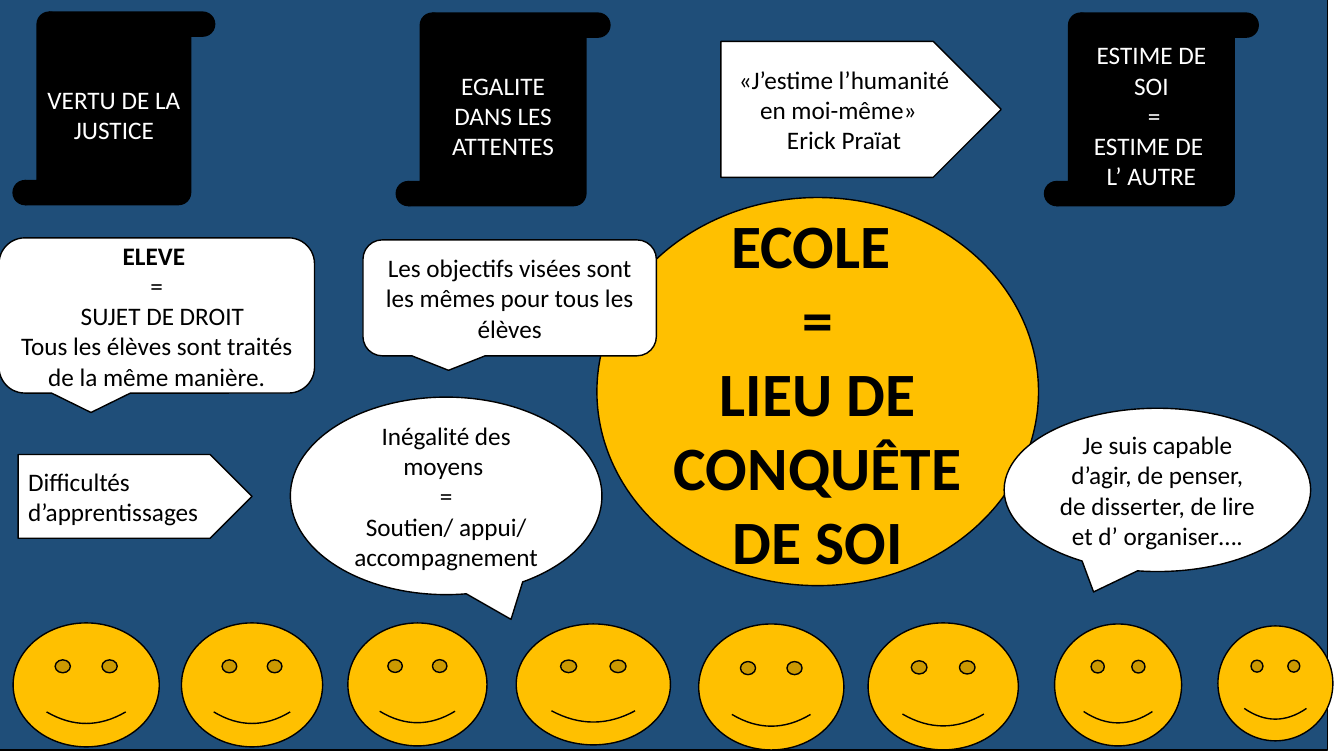
import pptx
import pptx.dml.color
import pptx.enum.shapes
import pptx.enum.text
import pptx.util

Inches = pptx.util.Inches
SHAPES = pptx.enum.shapes.MSO_SHAPE
ALIGN = pptx.enum.text.PP_ALIGN

BLUE, GOLD, BLACK, WHITE = "1F4E79", "FFC000", "000000", "FFFFFF"


def color(value):
    return pptx.dml.color.RGBColor.from_string(value)


def add_box(kind, place, fill, lines=(), size=18, ink=BLACK, align=ALIGN.CENTER, bold_lines=0):
    box = page.shapes.add_shape(kind, *[Inches(length) for length in place])
    box.shadow.inherit = False
    box.fill.solid()
    box.fill.fore_color.rgb = color(fill)
    box.line.color.rgb = color(BLACK)
    box.line.width = pptx.util.Pt(1)
    frame = box.text_frame
    frame.word_wrap = True
    frame.vertical_anchor = pptx.enum.text.MSO_ANCHOR.MIDDLE
    for index, line in enumerate(lines):
        para = frame.add_paragraph() if index else frame.paragraphs[0]
        para.alignment = align
        span = para.add_run()
        span.text = line
        formats = {"name": "Calibri", "size": pptx.util.Pt(size), "bold": index < bold_lines}
        for name, value in formats.items():
            setattr(span.font, name, value)
        span.font.color.rgb = color(ink)
    return box


deck = pptx.Presentation()
deck.slide_width, deck.slide_height = Inches(13.33), Inches(7.5)
page = deck.slides.add_slide(deck.slide_layouts[6])

# Blue backdrop
add_box(SHAPES.RECTANGLE, (-0.16, -0.06, 13.33, 7.5), BLUE)

# Black scrolls along the top
scrolls = [
    ((0.13, 0.12, 2, 1.91), ["VERTU DE LA JUSTICE"]),
    ((3.93, 0.13, 2.12, 1.91), ["EGALITE DANS LES ATTENTES"]),
    ((10.36, 0.13, 2.12, 1.91), ["ESTIME DE SOI", " =", "ESTIME DE ", "L’ AUTRE"]),
]
for place, lines in scrolls:
    add_box(SHAPES.VERTICAL_SCROLL, place, BLACK, lines, ink=WHITE)

# Central message
add_box(SHAPES.OVAL, (5.92, 1.96, 4.38, 3.85), GOLD,
        ["ECOLE ", "=", "LIEU DE CONQUÊTE DE SOI"], size=44, bold_lines=3)

# Arrow labels
add_box(SHAPES.PENTAGON, (0.18, 4.51, 2.32, 0.83), WHITE,
        ["Difficultés d’apprentissages"], align=ALIGN.LEFT)
add_box(SHAPES.PENTAGON, (7.15, 0.41, 2.78, 1.35), WHITE,
        ["«J’estime l’humanité en moi-même»  ", "Erick Praïat"])

# Speech bubbles
add_box(SHAPES.ROUNDED_RECTANGULAR_CALLOUT, (-0.01, 2.36, 3.13, 1.54), WHITE,
        ["ELEVE ", "=", "  SUJET DE DROIT",
         "Tous les élèves sont traités de la même manière."], bold_lines=1)
add_box(SHAPES.ROUNDED_RECTANGULAR_CALLOUT, (3.6, 2.38, 2.91, 1.15), WHITE,
        ["Les objectifs visées sont les mêmes pour tous les élèves"])
support = add_box(SHAPES.OVAL_CALLOUT, (2.88, 3.94, 3.09, 1.96), WHITE,
                  ["Inégalité des moyens ", "=", "Soutien/ appui/ accompagnement"])
support.element.spPr.xfrm.set("flipH", "1")  # tail points right
add_box(SHAPES.OVAL_CALLOUT, (9.96, 4.05, 3.04, 1.62), WHITE,
        ["Je suis capable d’agir, de penser, de disserter, de lire et d’ organiser…."])

# Row of pupils
pupils = [
    (0.13, 6.18, 1.45, 1.23), (1.8, 6.18, 1.4, 1.23),
    (3.45, 6.18, 1.38, 1.22), (5.12, 6.19, 1.53, 1.2),
    (6.93, 6.19, 1.44, 1.25), (8.61, 6.18, 1.49, 1.26),
    (10.46, 6.19, 1.26, 1.21), (12.08, 6.21, 1.14, 1.14),
]
for place in pupils:
    add_box(SHAPES.SMILEY_FACE, place, GOLD)

deck.save("out.pptx")
